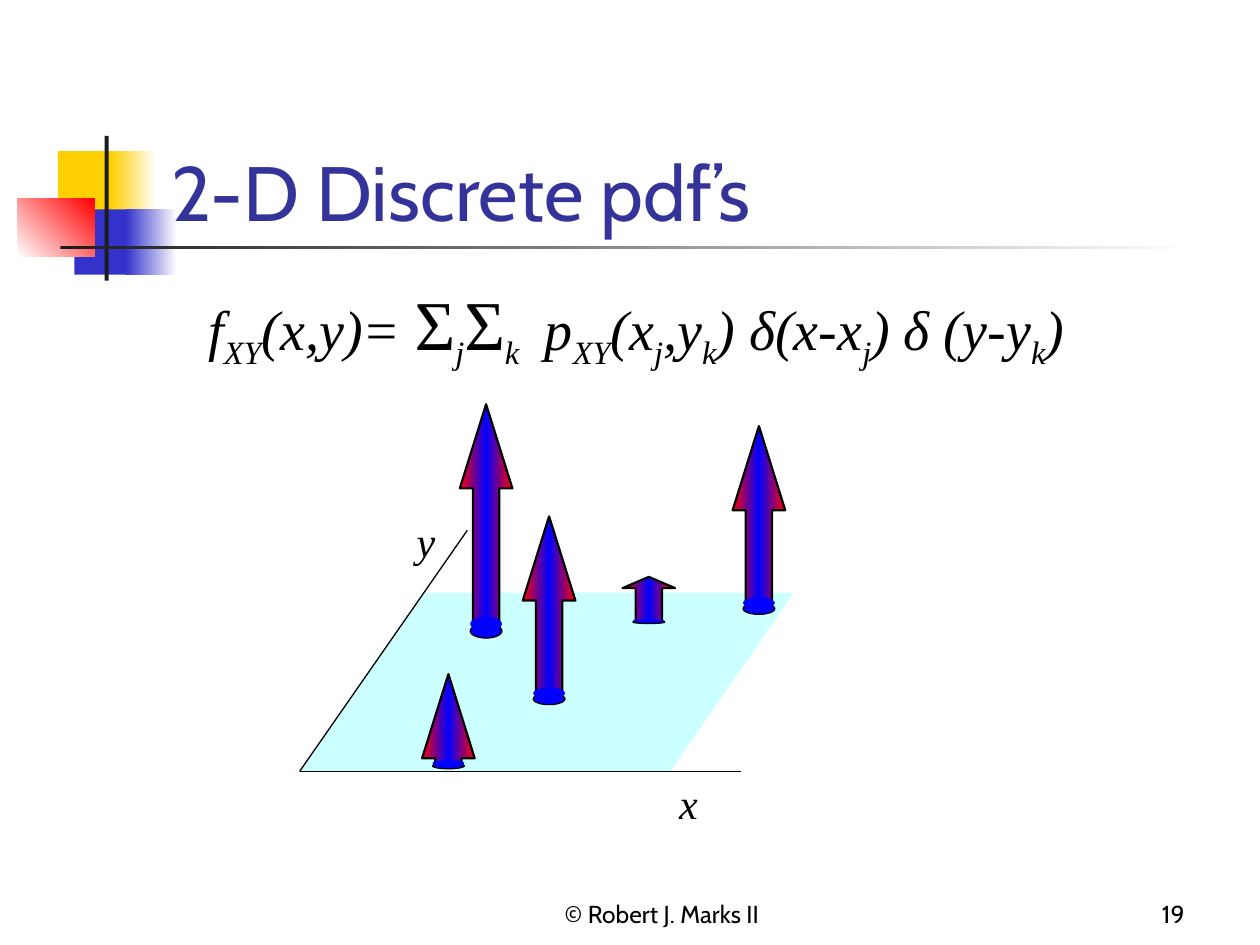
from copy import deepcopy
from dataclasses import dataclass

from lxml.etree import SubElement
from pptx import Presentation
from pptx.dml.color import RGBColor
from pptx.enum.shapes import MSO_CONNECTOR, MSO_SHAPE
from pptx.enum.text import MSO_ANCHOR as Anchor, PP_ALIGN as Align
from pptx.oxml.ns import qn
from pptx.util import Cm, Pt

SANS, SERIF = "Cabin", "Times New Roman"
BLACK, WHITE, BLUE, RED = "000000", "FFFFFF", "0000FF", "FF0000"
YELLOW, INDIGO, CHARCOAL = "FFCF01", "3333CC", "1C1C1C"
ARROW_WIDTH, HEAD_RATIO, DISC_WIDTH = 1.06, 1.6, 0.64


@dataclass
class Block:
    """Decorative rectangle; more than one colour makes a gradient."""
    left: float
    top: float
    width: float
    height: float
    colors: tuple[str, ...]
    angle: float = 0


@dataclass
class Impulse:
    center: float
    top: float
    height: float
    head: float = HEAD_RATIO


@dataclass
class Term:
    text: str
    subscript: bool = False
    size: float = 32
    italic: bool = True


BLOCKS = [
    Block(1.17, 3.05, 1.22, 1.32, (YELLOW,)),
    Block(2.24, 3.05, 0.91, 1.32, (YELLOW, WHITE)),
    Block(1.5, 4.22, 1.17, 1.32, (INDIGO,)),
    Block(2.54, 4.22, 1.02, 1.32, (INDIGO, WHITE)),
    Block(0.36, 4.01, 1.55, 1.17, (WHITE, RED), 45),
    Block(2.11, 2.74, 0.08, 2.92, (CHARCOAL,)),
    Block(1.22, 4.95, 22.86, 0.08, (CHARCOAL, WHITE)),
]
IMPULSES = [
    Impulse(9.8, 8.15, 4.57),
    Impulse(13.08, 11.63, 0.91, head=0.25),
    Impulse(11.07, 10.41, 3.68),
    Impulse(9.04, 13.59, 1.85),
    Impulse(15.3, 8.59, 3.68),
]
FORMULA = [
    Term(" f"), Term("XY", True), Term("(x,y)= "),
    Term("Σ", size=40, italic=False), Term("j", True),
    Term("Σ", size=40, italic=False), Term("k ", True),
    Term(" ", size=40, italic=False),
    Term("p"), Term("XY", True), Term("(x"), Term("j", True),
    Term(",y"), Term("k", True), Term(") δ(x-x"), Term("j", True),
    Term(") δ (y-y"), Term("k", True), Term(")"),
]


def rgb(color: str) -> RGBColor:
    return RGBColor.from_string(color)


def fill_shape(shape, colors: tuple[str, ...], angle: float = 0) -> None:
    fill = shape.fill
    if len(colors) == 1:
        fill.solid()
        fill.fore_color.rgb = rgb(colors[0])
        return
    fill.gradient()
    fill.gradient_angle = angle
    stop_list = shape._element.spPr.find(".//" + qn("a:gsLst"))
    while len(stop_list) < len(colors):
        stop_list.append(deepcopy(stop_list[0]))
    for index, (stop, color) in enumerate(zip(fill.gradient_stops, colors)):
        stop.color.rgb = rgb(color)
        stop.position = index / (len(colors) - 1)


def add_shape(slide, kind, left: float, top: float, width: float, height: float,
              colors: tuple[str, ...], *, angle: float = 0, line_width: float = 0):
    shape = slide.shapes.add_shape(kind, Cm(left), Cm(top), Cm(width), Cm(height))
    shape.shadow.inherit = False
    fill_shape(shape, colors, angle)
    if line_width:
        shape.line.color.rgb = rgb(BLACK)
        shape.line.width = Pt(line_width)
    else:
        shape.line.fill.background()
    return shape


def add_run(paragraph, text: str, *, size: float, font: str = SERIF, color: str = BLACK,
            italic: bool = False, subscript: bool = False) -> None:
    run = paragraph.add_run()
    run.text = text
    run.font.name, run.font.size, run.font.italic = font, Pt(size), italic
    run.font.color.rgb = rgb(color)
    if subscript:
        run.font._element.set("baseline", "-25000")


def add_text_box(slide, left: float, top: float, width: float, height: float, *,
                 align=Align.LEFT, anchor=Anchor.TOP, space_before: float = 0):
    """Add an empty text box and return its paragraph."""
    frame = slide.shapes.add_textbox(Cm(left), Cm(top), Cm(width), Cm(height)).text_frame
    frame.word_wrap = True
    frame.vertical_anchor = anchor
    paragraph = frame.paragraphs[0]
    paragraph.alignment = align
    paragraph.space_before = Pt(space_before)
    return paragraph


def add_axis(slide, start: tuple[float, float], end: tuple[float, float]) -> None:
    axis = slide.shapes.add_connector(
        MSO_CONNECTOR.STRAIGHT, *(Cm(value) for value in start + end))
    axis.line.color.rgb = rgb(BLACK)
    axis.line.width = Pt(0.75)
    SubElement(axis._element.spPr, qn("a:effectLst"))


def add_impulse(slide, impulse: Impulse) -> None:
    """Draw an up arrow standing on two stacked discs."""
    arrow = add_shape(slide, MSO_SHAPE.UP_ARROW, impulse.center - ARROW_WIDTH / 2,
                      impulse.top, ARROW_WIDTH, impulse.height,
                      (RED, BLUE, RED), line_width=1.25)
    arrow.adjustments[0] = 0.5
    arrow.adjustments[1] = impulse.head
    thickness = impulse.height / 16
    base = impulse.top + impulse.height
    for rise, line_width in ((0.5, 0.75), (1, 0)):
        add_shape(slide, MSO_SHAPE.OVAL, impulse.center - DISC_WIDTH / 2,
                  base - rise * thickness, DISC_WIDTH, thickness,
                  (BLUE,), line_width=line_width)


def add_title(slide, text: str) -> None:
    title = slide.shapes.title
    title.left, title.top, title.width, title.height = Cm(3.2), Cm(1.73), Cm(21.64), Cm(3.18)
    title.text_frame.vertical_anchor = Anchor.BOTTOM
    paragraph = title.text_frame.paragraphs[0]
    paragraph.alignment = Align.LEFT
    add_run(paragraph, text, size=44, font=SANS, color="333399")
    slide.shapes._spTree.append(title._element)  # bring in front of the blocks


def add_plane(slide) -> None:
    plane = add_shape(slide, MSO_SHAPE.PARALLELOGRAM, 6.04, 11.95, 9.96, 3.6, ("CCFFFF",))
    plane.adjustments[0] = 0.69
    origin = (6.04, 15.55)
    add_axis(slide, origin, (14.93, 15.55))
    add_axis(slide, origin, (9.42, 10.69))
    for label, left, top in (("y", 8.15, 10.26), (" x", 13.23, 15.55)):
        paragraph = add_text_box(slide, left, top, 1.47, 1.27, space_before=3)
        add_run(paragraph, label, size=24, italic=True)


def main() -> None:
    presentation = Presentation()
    presentation.slide_width, presentation.slide_height = Cm(25.4), Cm(19.05)
    slide = presentation.slides.add_slide(presentation.slide_layouts[5])

    for block in BLOCKS:
        add_shape(slide, MSO_SHAPE.RECTANGLE, block.left, block.top, block.width,
                  block.height, block.colors, angle=block.angle)
    for text, left, width, align in (("© Robert J. Marks II", 9.32, 8.05, Align.CENTER),
                                     ("19", 18.85, 5.28, Align.RIGHT)):
        paragraph = add_text_box(slide, left, 17.58, width, 1.27,
                                 align=align, anchor=Anchor.BOTTOM)
        add_run(paragraph, text, size=14, font=SANS)
    add_title(slide, "2-D Discrete pdf’s")

    formula = add_text_box(slide, 2.03, 5.54, 21.31, 2.11, align=Align.CENTER, space_before=4)
    for term in FORMULA:
        add_run(formula, term.text, size=term.size, italic=term.italic,
                subscript=term.subscript)

    add_plane(slide)
    for impulse in IMPULSES:
        add_impulse(slide, impulse)
    presentation.save("out.pptx")


if __name__ == "__main__":
    main()
